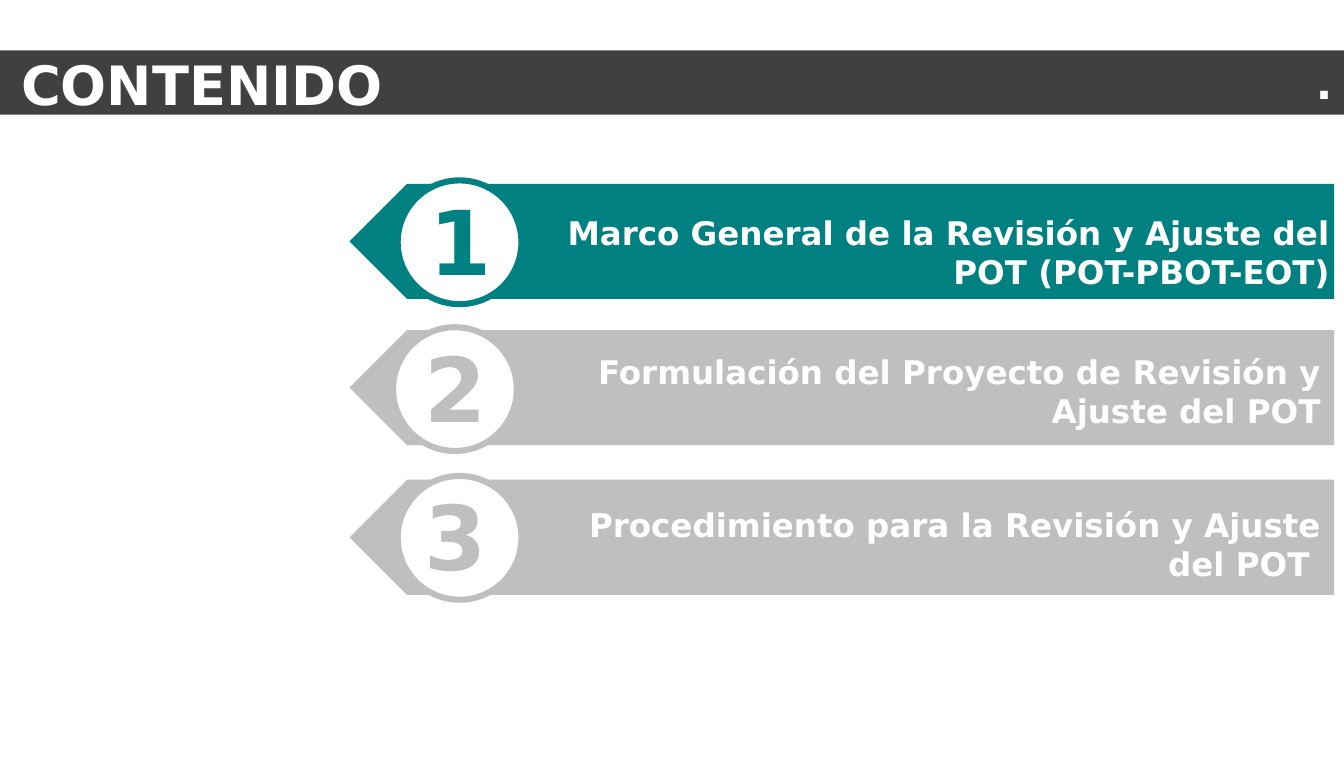
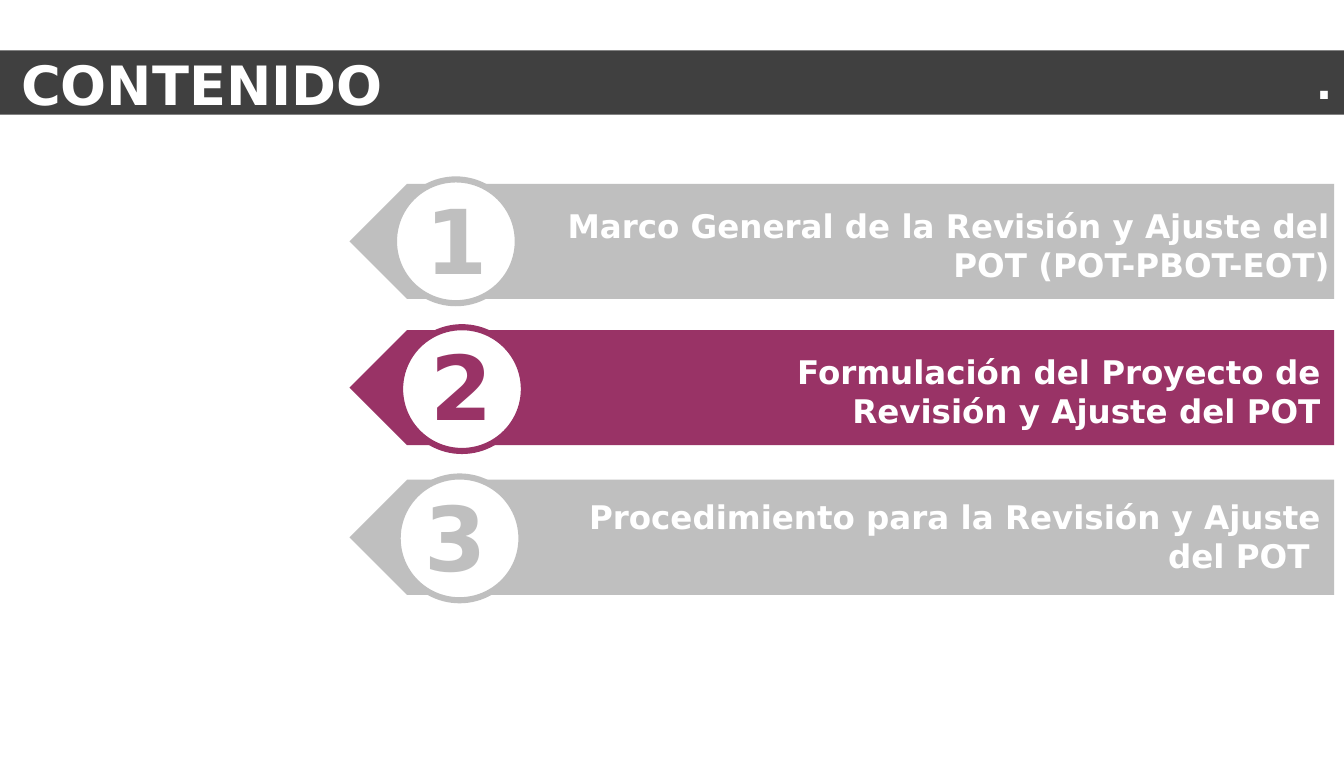
"""Build two agenda slides, each highlighting one chapter of the contents."""
from pptx import Presentation
from pptx.dml.color import RGBColor
from pptx.enum import shapes, text
from pptx.util import Pt

WHITE = RGBColor(0xFF, 0xFF, 0xFF)
CHARCOAL = RGBColor(0x40, 0x40, 0x40)
GREY = RGBColor(0xBF, 0xBF, 0xBF)
TEAL = RGBColor(0x00, 0x80, 0x80)
PLUM = RGBColor(0x99, 0x33, 0x66)
FONT = "DejaVu Sans"

SLIDE_W, SLIDE_H = 992.25, 567
ARROW_LEFT, ARROW_LENGTH, ARROW_H = 258, 727, 85
ARROW_CENTERS = [178.2, 286.2, 396.7]
CIRCLE = 91.4
NUMBER_W, NUMBER_H, LABEL_H = 97.2, 87.1, 67
WIDE, NARROW = (8.64, 4.32), (7.2, 3.6)

CHAPTERS = [
    "Marco General de la Revisión y Ajuste del POT (POT-PBOT-EOT)",
    "Formulación del Proyecto de Revisión y Ajuste del POT",
    "Procedimiento para la Revisión y Ajuste del POT ",
]

# Per chapter: circle (left, top), number (left, top), label (left, top, width)
AGENDAS = [
    (0, TEAL, [
        ((293.6, 133.2), (291.6, 134.2), (374.8, 153, 615.4)),
        ((290.2, 241.6), (288, 242.2), (388.5, 255.3, 595.2)),
        ((293.6, 351.4), (288, 351.8), (408.7, 368.6, 575.1)),
    ]),
    (1, PLUM, [
        ((290.9, 132.5), (288.7, 133.2), (374.8, 147.6, 615.4)),
        ((295.4, 241.6), (292.3, 240.8), (463, 255.3, 520.6)),
        ((293.6, 351.8), (288, 352.1), (408.7, 362.9, 575.1)),
    ]),
]


def add_panel(slide, kind, left, top, width, height, fill, outline=None):
    panel = slide.shapes.add_shape(kind, Pt(left), Pt(top), Pt(width), Pt(height))
    panel.shadow.inherit = False
    panel.fill.solid()
    panel.fill.fore_color.rgb = fill
    if outline is None:
        panel.line.fill.background()
    else:
        panel.line.color.rgb = outline
        panel.line.width = Pt(4.5)
    return panel


def write(shape, words, size, color, align, insets, wrap=True):
    frame = shape.text_frame
    frame.text = words
    frame.word_wrap = wrap
    frame.auto_size = text.MSO_AUTO_SIZE.SHAPE_TO_FIT_TEXT
    frame.margin_left = frame.margin_right = Pt(insets[0])
    frame.margin_top = frame.margin_bottom = Pt(insets[1])
    line = frame.paragraphs[0]
    line.alignment = align
    font = line.runs[0].font
    font.name, font.size, font.bold = FONT, Pt(size), True
    font.color.rgb = color


deck = Presentation()
deck.slide_width, deck.slide_height = Pt(SLIDE_W), Pt(SLIDE_H)

for active, accent, places in AGENDAS:
    slide = deck.slides.add_slide(deck.slide_layouts[6])

    title_band = add_panel(slide, shapes.MSO_SHAPE.RECTANGLE, 0, 37.2, SLIDE_W, 47.5, CHARCOAL)
    write(title_band, ".", 32, WHITE, text.PP_ALIGN.RIGHT, WIDE)
    title = slide.shapes.add_textbox(Pt(8.6), Pt(34.2), Pt(291.6), Pt(55.4))
    write(title, "CONTENIDO", 40, WHITE, text.PP_ALIGN.LEFT, NARROW, wrap=False)

    for index, (chapter, center, place) in enumerate(zip(CHAPTERS, ARROW_CENTERS, places)):
        circle_at, number_at, (label_left, label_top, label_w) = place
        color = accent if index == active else GREY

        arrow = add_panel(slide, shapes.MSO_SHAPE.SNIP_2_SAME_RECTANGLE,
                          ARROW_LEFT + (ARROW_LENGTH - ARROW_H) / 2, center - ARROW_LENGTH / 2,
                          ARROW_H, ARROW_LENGTH, color)
        arrow.rotation = 270
        arrow.adjustments[0], arrow.adjustments[1] = 0.5, 0

        label = slide.shapes.add_textbox(Pt(label_left), Pt(label_top), Pt(label_w), Pt(LABEL_H))
        write(label, chapter, 24, WHITE, text.PP_ALIGN.RIGHT, WIDE)

        add_panel(slide, shapes.MSO_SHAPE.FLOWCHART_CONNECTOR, *circle_at, CIRCLE, CIRCLE,
                  WHITE, color)
        number = slide.shapes.add_textbox(Pt(number_at[0]), Pt(number_at[1]),
                                          Pt(NUMBER_W), Pt(NUMBER_H))
        write(number, str(index + 1), 66, color, text.PP_ALIGN.CENTER, NARROW)

deck.save("out.pptx")
